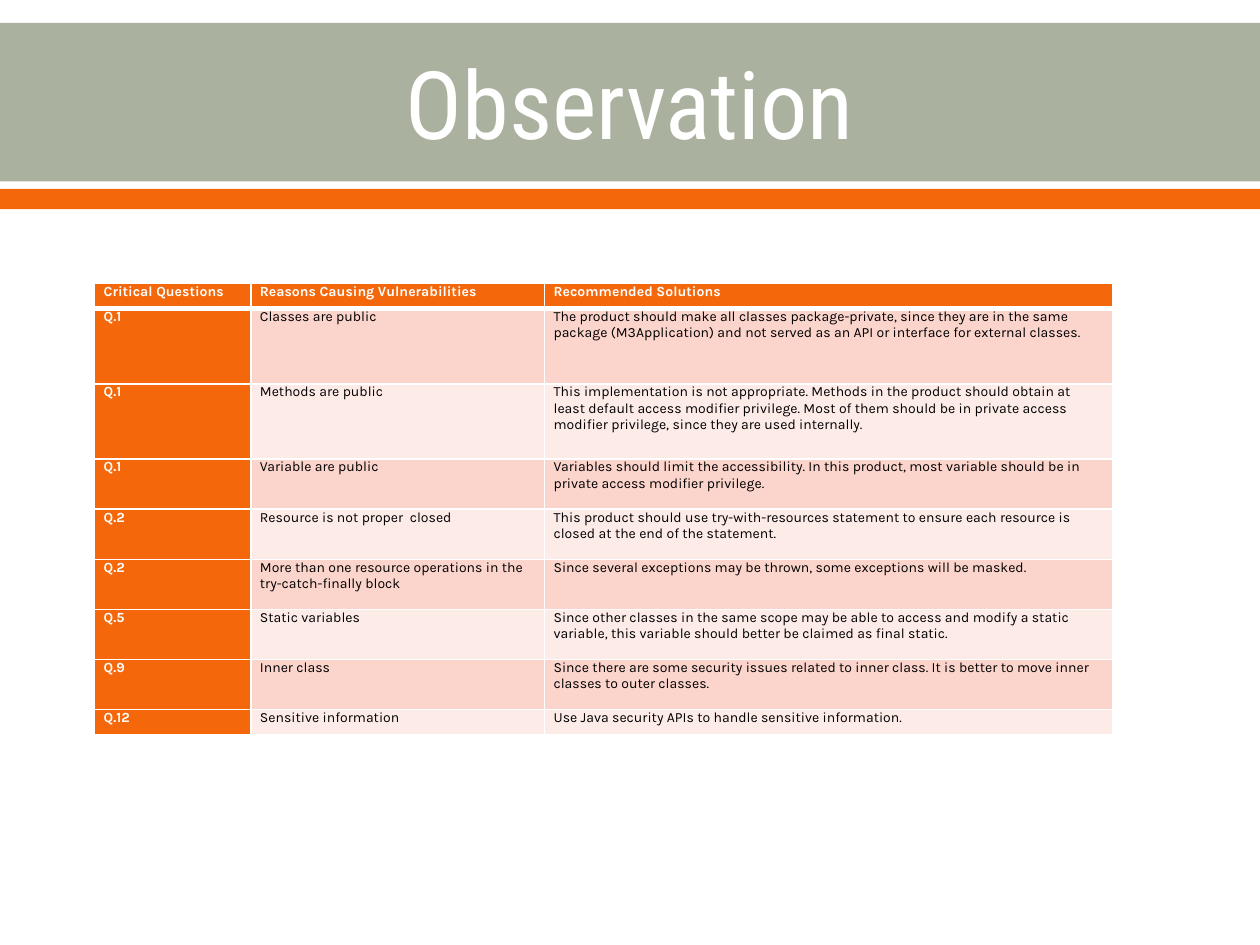
from lxml.etree import SubElement
from pptx import Presentation
from pptx.dml.color import RGBColor
from pptx.enum.shapes import MSO_SHAPE
from pptx.enum.text import MSO_ANCHOR, PP_ALIGN
from pptx.oxml.ns import qn
from pptx.util import Cm, Pt

WHITE, BLACK = "FFFFFF", "000000"
SAGE, ORANGE = "ABB19F", "F4680B"
ROW_TINTS = ("FBD4CC", "FDEBE7")

HEADINGS = ("Critical Questions", "Reasons Causing Vulnerabilities", "Recommended Solutions")
# Height in lines, question, reason, solution
OBSERVATIONS = [
    (3, "Q.1", "Classes are public",
     "The product should make all classes package-private, since they are in the same package "
     "(M3Application) and not served as an API or interface for external classes."),
    (3, "Q.1", "Methods are public",
     "This implementation is not appropriate. Methods in the product should obtain at least default "
     "access modifier privilege. Most of them should be in private access modifier privilege, "
     "since they are used internally."),
    (2, "Q.1", "Variable are public",
     "Variables should limit the accessibility. In this product, most variable should be in "
     "private access modifier privilege."),
    (2, "Q.2", "Resource is not proper  closed",
     "This product should use try-with-resources statement to ensure each resource is closed "
     "at the end of the statement."),
    (2, "Q.2", "More than one resource operations in the try-catch-finally block",
     "Since several exceptions may be thrown, some exceptions will be masked."),
    (2, "Q.5", "Static variables",
     "Since other classes in the same scope may be able to access and modify a static variable, "
     "this variable should better be claimed as final static."),
    (2, "Q.9", "Inner class",
     "Since there are some security issues related to inner class. It is better to move inner "
     "classes to outer classes."),
    (1, "Q.12", "Sensitive information",
     "Use Java security APIs to handle sensitive information."),
]


def color(hex_code):
    return RGBColor.from_string(hex_code)


class SlideBuilder:
    heading_font = "Roboto Condensed"
    body_font = "Karla"

    def __init__(self, slide):
        self.slide = slide

    def style_runs(self, text_frame, font_name, size, hex_code, bold=False):
        for paragraph in text_frame.paragraphs:
            for run in paragraph.runs:
                run.font.name = font_name
                run.font.size = Pt(size)
                run.font.bold = bold
                run.font.color.rgb = color(hex_code)

    def band(self, top, height, hex_code):
        """Draw a bar across the full slide width."""
        bar = self.slide.shapes.add_shape(MSO_SHAPE.RECTANGLE, 0, Cm(top), Cm(25.4), Cm(height))
        bar.shadow.inherit = False
        bar.fill.solid()
        bar.fill.fore_color.rgb = color(hex_code)
        bar.line.fill.background()

    def title(self, text, left, top, width, height):
        heading = self.slide.shapes.add_textbox(Cm(left), Cm(top), Cm(width), Cm(height)).text_frame
        heading.word_wrap = True
        heading.vertical_anchor = MSO_ANCHOR.MIDDLE
        heading.text = text
        heading.paragraphs[0].alignment = PP_ALIGN.CENTER
        self.style_runs(heading, self.heading_font, 54, WHITE)

    def borders(self, cell, top=1, bottom=1):
        """Give a cell white borders; call before filling, as lines precede the fill."""
        properties = cell._tc.get_or_add_tcPr()
        for side, width in (("L", 1), ("R", 1), ("T", top), ("B", bottom)):
            line = SubElement(properties, qn(f"a:ln{side}"), w=str(Pt(width)))
            SubElement(SubElement(line, qn("a:solidFill")), qn("a:srgbClr"), val=WHITE)

    def cell(self, cell, text, fill, text_color, bold, top=1, bottom=1):
        cell.margin_left = cell.margin_right = Cm(0.18)
        cell.margin_top = cell.margin_bottom = 0
        self.borders(cell, top, bottom)
        cell.fill.solid()
        cell.fill.fore_color.rgb = color(fill)
        cell.text_frame.text = text
        self.style_runs(cell.text_frame, self.body_font, 8, text_color, bold)

    def table(self, headings, records, left, top, widths, line_height):
        rows = [(1, *headings), *records]
        total_height = sum(row[0] for row in rows) * line_height
        grid = self.slide.shapes.add_table(
            len(rows), len(widths), Cm(left), Cm(top), Cm(sum(widths)), Cm(total_height)).table
        for column, width in zip(grid.columns, widths):
            column.width = Cm(width)
        for r, (lines, *texts) in enumerate(rows):
            grid.rows[r].height = Cm(lines * line_height)
            for c, text in enumerate(texts):
                emphasized = r == 0 or c == 0
                self.cell(
                    grid.cell(r, c), text,
                    fill=ORANGE if emphasized else ROW_TINTS[(r - 1) % 2],
                    text_color=WHITE if emphasized else BLACK,
                    bold=emphasized,
                    top=3 if r == 1 else 1,
                    bottom=3 if r == 0 else 1)


def main():
    deck = Presentation()
    deck.slide_width, deck.slide_height = Cm(25.4), Cm(19.05)
    builder = SlideBuilder(deck.slides.add_slide(deck.slide_layouts[6]))
    builder.band(0.46, 3.2, SAGE)
    builder.band(3.81, 0.41, ORANGE)
    builder.title("Observation", 1.27, 0.51, 22.86, 3.1)
    builder.table(HEADINGS, OBSERVATIONS, left=1.91, top=5.72,
                  widths=(3.15, 5.92, 11.46), line_height=9.09 / 18)
    deck.save("out.pptx")


if __name__ == "__main__":
    main()
